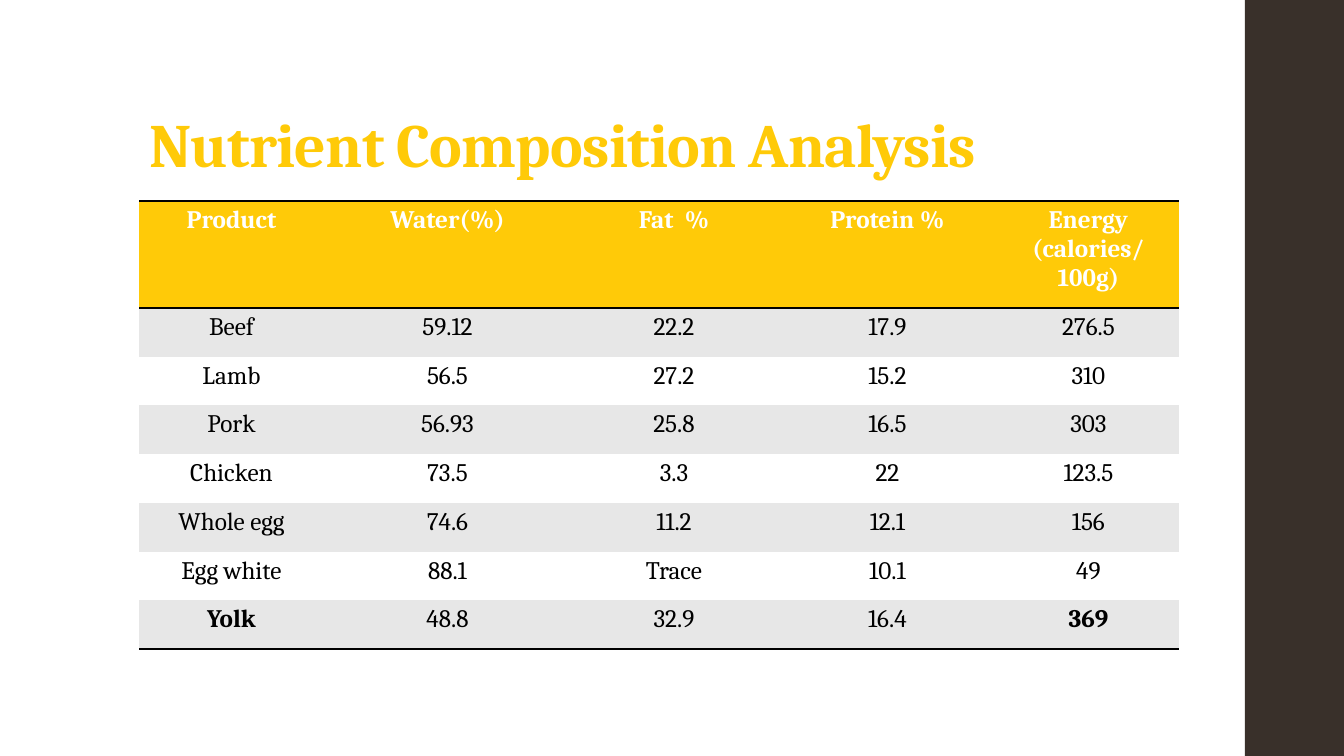
from dataclasses import dataclass

import pptx
import pptx.dml.color
import pptx.enum.shapes
import pptx.enum.text
import pptx.oxml
import pptx.oxml.ns
import pptx.util

PX = 914400 / 100.8
FONT = "Cambria"
GOLD, BROWN, GREY, WHITE, BLACK = "FFCA08", "39302A", "E7E7E7", "FFFFFF", "000000"


@dataclass
class Row:
    cells: list[str]
    height: int
    fill: str
    color: str = BLACK
    bold: tuple[int, ...] = ()
    borders: tuple[str, ...] = ()


def px(n: int) -> int:
    return round(n * PX)


def rgb(color: str) -> pptx.dml.color.RGBColor:
    return pptx.dml.color.RGBColor.from_string(color)


def style(p, size: int, color: str, bold: bool, align) -> None:
    p.alignment = align
    p.font.name = FONT
    p.font.size = pptx.util.Pt(size)
    p.font.bold = bold
    p.font.color.rgb = rgb(color)


def add_borders(cell, sides: tuple[str, ...]) -> None:
    tcPr = cell._tc.get_or_add_tcPr()
    for i, side in enumerate(sides):
        tcPr.insert(i, pptx.oxml.parse_xml(
            f'<a:{side} {pptx.oxml.ns.nsdecls("a")} w="25400"><a:solidFill>'
            f'<a:srgbClr val="{BLACK}"/></a:solidFill></a:{side}>'))


def fill_row(table, index: int, row: Row) -> None:
    table.rows[index].height = px(row.height)
    for col, text in enumerate(row.cells):
        cell = table.cell(index, col)
        cell.text = text
        cell.fill.solid()
        cell.fill.fore_color.rgb = rgb(row.fill)
        add_borders(cell, row.borders)
        for p in cell.text_frame.paragraphs:
            style(p, 18, row.color, col in row.bold, pptx.enum.text.PP_ALIGN.CENTER)


prs = pptx.Presentation()
prs.slide_width, prs.slide_height = px(1344), px(756)
s = prs.slides.add_slide(prs.slide_layouts[5])

# Side band
band = s.shapes.add_shape(pptx.enum.shapes.MSO_SHAPE.RECTANGLE,
                          px(1245), 0, px(99), px(756))
band.shadow.inherit = False
band.fill.solid()
band.fill.fore_color.rgb = rgb(BROWN)
band.line.fill.background()

# Title
title = s.shapes.title
title.left, title.top, title.width, title.height = px(139), px(29), px(1068), px(157)
tf = title.text_frame
tf.text = "Nutrient Composition Analysis"
tf.word_wrap = True
tf.auto_size = pptx.enum.text.MSO_AUTO_SIZE.NONE
tf.vertical_anchor = pptx.enum.text.MSO_ANCHOR.BOTTOM
tf.margin_left = tf.margin_right = px(10)
tf.margin_top, tf.margin_bottom = px(3), px(5)
p = tf.paragraphs[0]
p.line_spacing = 0.9
style(p, 44, GOLD, True, pptx.enum.text.PP_ALIGN.LEFT)
p.runs[0]._r.get_or_add_rPr().set("spc", "-50")

# Table content
HEADER = ["Product", "Water(%)", "Fat  %", "Protein %", "Energy\n(calories/100g)"]
PRODUCTS = [
    ["Beef", "59.12", "22.2", "17.9", "276.5"],
    ["Lamb", "56.5", "27.2", "15.2", "310"],
    ["Pork", "56.93", "25.8", "16.5", "303"],
    ["Chicken", "73.5", "3.3", "22", "123.5"],
    ["Whole egg", "74.6", "11.2", "12.1", "156"],
    ["Egg white", "88.1", "Trace", "10.1", "49"],
    ["Yolk", "48.8", "32.9", "16.4", "369"],
]
WIDTHS = [185, 247, 206, 221, 181]
HEADER_H, BODY_H = 107, 341

edges = [round(BODY_H * i / len(PRODUCTS)) for i in range(len(PRODUCTS) + 1)]
rows = [Row(HEADER, HEADER_H, GOLD, WHITE, tuple(range(len(HEADER))), ("lnT", "lnB"))]
for i, cells in enumerate(PRODUCTS):
    rows.append(Row(cells, edges[i + 1] - edges[i], WHITE if i % 2 else GREY))
rows[-1].bold, rows[-1].borders = (0, 4), ("lnB",)

# Table
frame = s.shapes.add_table(len(rows), len(WIDTHS), px(139), px(201),
                           px(sum(WIDTHS)), px(HEADER_H + BODY_H))
table = frame.table
table.first_row = table.horz_banding = False
style_id = table._tbl.tblPr.find(pptx.oxml.ns.qn("a:tableStyleId"))
style_id.text = "{2D5ABB26-0587-4C30-8999-92F81FD0307C}"
for column, width in zip(table.columns, WIDTHS):
    column.width = px(width)
for i, row in enumerate(rows):
    fill_row(table, i, row)

prs.save("out.pptx")
